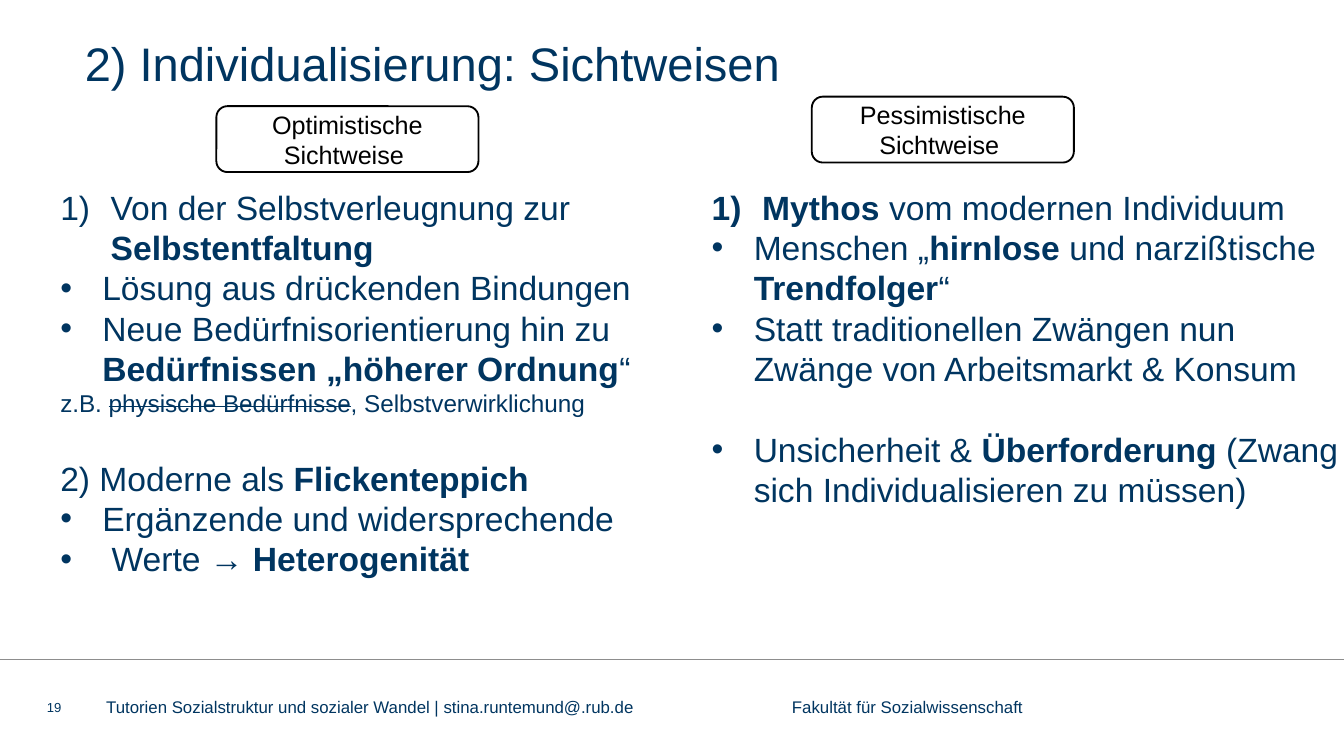
import pptx
import pptx.dml.color
import pptx.enum.shapes
import pptx.enum.text
import pptx.oxml.ns
import pptx.util
from lxml import etree

Pt = pptx.util.Pt
ANCHOR = pptx.enum.text.MSO_ANCHOR
qn = pptx.oxml.ns.qn
NAVY = "003560"


def color(value):
    return pptx.dml.color.RGBColor.from_string(value)


def add_run(p, text, size, fill=NAVY, bold=False):
    r = p.add_run()
    r.text = text
    r.font.name = "Arial"
    r.font.size = Pt(size)
    r.font.bold = bold
    r.font.color.rgb = color(fill)
    return r


prs = pptx.Presentation()
prs.slide_width, prs.slide_height = Pt(720), Pt(405)
s = prs.slides.add_slide(prs.slide_layouts[6])

# Footer rule
line = s.shapes.add_connector(
    pptx.enum.shapes.MSO_CONNECTOR.STRAIGHT, Pt(0), Pt(353.5), Pt(720), Pt(353.5))
line.line.color.rgb = color("8D8D8D")
line.line.width = Pt(0.5)
etree.SubElement(line._element.spPr, qn("a:effectLst"))

# Title, page number and footer: left, top, width, height, size, anchor, text
for x, y, w, h, size, anchor, text in [
    (45.4, 18.7, 661, 24.5, 25.2, ANCHOR.TOP, "2) Individualisierung: Sichtweisen"),
    (25.2, 374.4, 20, 8.6, 7, ANCHOR.MIDDLE, "19"),
    (56.9, 374.4, 496, 8.6, 9, ANCHOR.MIDDLE,
     "Tutorien Sozialstruktur und sozialer Wandel | stina.runtemund@.rub.de"
     "\tFakultät für Sozialwissenschaft"),
]:
    tf = s.shapes.add_textbox(Pt(x), Pt(y), Pt(w), Pt(h)).text_frame
    tf.word_wrap = True
    tf.vertical_anchor = anchor
    tf.margin_left = tf.margin_right = tf.margin_top = tf.margin_bottom = 0
    p = tf.paragraphs[0]
    if "\t" in text:
        tabs = etree.SubElement(p._p.get_or_add_pPr(), qn("a:tabLst"))
        etree.SubElement(tabs, qn("a:tab"), pos=str(Pt(367.4)), algn="l")
    add_run(p, text, size)

# Two columns: each paragraph is (marker, space before, runs);
# each run is (text, style) with style b = bold, s = struck through
GAP = 21.6
optimistic = [
    ("1)", 0, [("Von der Selbstverleugnung zur ", ""), ("Selbstentfaltung", "b")]),
    ("•", 0, [("Lösung aus drückenden Bindungen", "")]),
    ("•", 0, [("Neue Bedürfnisorientierung hin zu ", ""),
              ("Bedürfnissen „höherer Ordnung", "b"), ("“", "")]),
    ("z.B.", 0, [("z.B. ", ""), ("physische Bedürfnisse", "s"),
                 (", Selbstverwirklichung", "")]),
    ("", GAP, [("2) Moderne als ", ""), ("Flickenteppich", "b")]),
    ("•", 0, [("Ergänzende und widersprechende", "")]),
    ("•", 0, [(" Werte → ", ""), ("Heterogenität", "b")]),
]
pessimistic = [
    ("1)", 0, [("Mythos", "b"), (" vom modernen Individuum", "")]),
    ("•", 0, [("Menschen „", ""), ("hirnlose", "b"), (" und narzißtische ", ""),
              ("Trendfolger", "b"), ("“", "")]),
    ("•", 0, [("Statt traditionellen Zwängen nun Zwänge von Arbeitsmarkt & Konsum", "")]),
    ("•", GAP, [("Unsicherheit & ", ""), ("Überforderung", "b"),
                (" (Zwang sich Individualisieren zu müssen)", "")]),
]
INDENTS = {"1)": 27, "•": 22.5}
for x, paragraphs in [(25.2, optimistic), (374.2, pessimistic)]:
    tf = s.shapes.add_textbox(Pt(x), Pt(96.5), Pt(363.2), Pt(241)).text_frame
    tf.word_wrap = True
    for i, (marker, before, runs) in enumerate(paragraphs):
        p = tf.paragraphs[0] if i == 0 else tf.add_paragraph()
        if marker in INDENTS:
            indent = Pt(INDENTS[marker])
            pPr = p._p.get_or_add_pPr()
            pPr.set("marL", str(indent))
            pPr.set("indent", str(-indent))
            etree.SubElement(pPr, qn("a:buFont"), typeface="Arial")
            if marker == "•":
                etree.SubElement(pPr, qn("a:buChar"), char=marker)
            else:
                etree.SubElement(pPr, qn("a:buAutoNum"), type="arabicParenR")
        if before:
            p.space_before = Pt(before)
        for text, style in runs:
            r = add_run(p, text, 13 if marker == "z.B." else 18, bold=style == "b")
            if style == "s":
                r.font._element.set("strike", "sngStrike")

# Column headings
for x, y, text in [(115.9, 56.9, "Optimistische Sichtweise "),
                   (434.9, 51.8, "Pessimistische Sichtweise ")]:
    sp = s.shapes.add_shape(pptx.enum.shapes.MSO_SHAPE.ROUNDED_RECTANGLE,
                            Pt(x), Pt(y), Pt(140.4), Pt(35.3))
    sp.shadow.inherit = False
    sp.fill.solid()
    sp.fill.fore_color.rgb = color("FFFFFF")
    sp.line.color.rgb = color("000000")
    sp.line.width = Pt(1)
    tf = sp.text_frame
    tf.word_wrap = True
    tf.vertical_anchor = ANCHOR.MIDDLE
    p = tf.paragraphs[0]
    p.alignment = pptx.enum.text.PP_ALIGN.CENTER
    add_run(p, text, 13.5, "000000")

prs.save("out.pptx")
